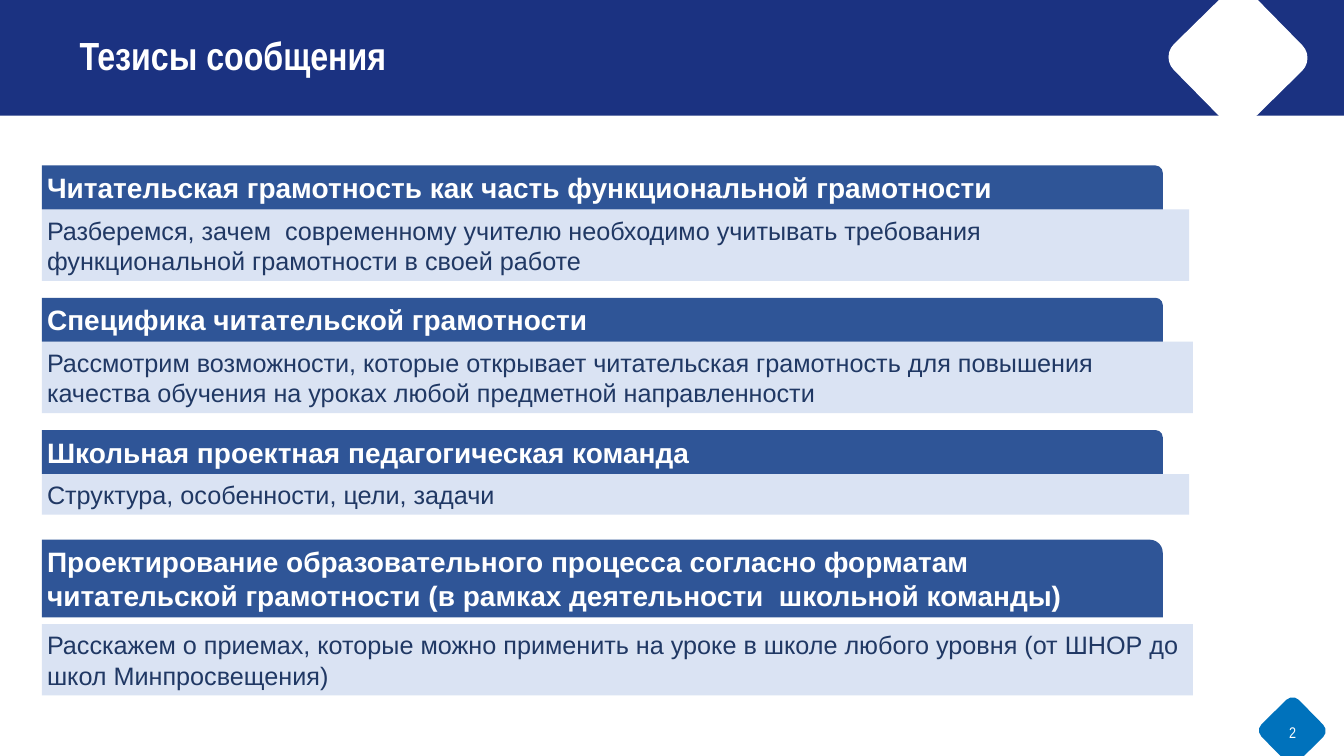
"""Builds the slide that lists the four theses of a talk on reading literacy."""
from pptx import Presentation
from pptx.dml.color import RGBColor
from pptx.enum.shapes import MSO_SHAPE
from pptx.enum.text import MSO_ANCHOR, PP_ALIGN
from pptx.util import Pt

COLORS = {
    "band": "1B3281",
    "badge": "0072BC",
    "header": "2F5597",
    "panel": "DAE3F3",
    "body": "203864",
    "white": "FFFFFF",
}

deck = Presentation()
deck.slide_width, deck.slide_height = Pt(960), Pt(540)
page = deck.slides.add_slide(deck.slide_layouts[6])


def add_block(preset, left, top, width, height, color, rotation=0):
    """Add a filled shape without line or shadow."""
    block = page.shapes.add_shape(preset, Pt(left), Pt(top), Pt(width), Pt(height))
    block.shadow.inherit = False
    block.fill.solid()
    block.fill.fore_color.rgb = RGBColor.from_string(COLORS[color])
    block.line.fill.background()
    block.rotation = rotation
    return block


def write(box, text, size, color, font, bold=False, align=PP_ALIGN.LEFT, wrap=True):
    """Put one vertically centred paragraph into a box and return it."""
    frame = box.text_frame
    frame.word_wrap = wrap
    frame.vertical_anchor = MSO_ANCHOR.MIDDLE
    frame.margin_left = frame.margin_right = Pt(3.6)
    frame.margin_top = frame.margin_bottom = Pt(3.6)
    para = frame.paragraphs[0]
    para.text = text
    para.alignment = align
    para.font.name = font
    para.font.size = Pt(size)
    para.font.bold = bold
    para.font.color.rgb = RGBColor.from_string(COLORS[color])
    return para


add_block(MSO_SHAPE.ROUNDED_RECTANGLE, 904.4, 503.2, 37.4, 37.4, "badge", 45.5)
add_block(MSO_SHAPE.RECTANGLE, 0, 0, 960, 82.6, "band")
add_block(MSO_SHAPE.ROUNDED_RECTANGLE, 845.4, 2.2, 77.8, 77.8, "white", 45.5)

title = page.shapes.add_textbox(Pt(53.3), Pt(0), Pt(783.4), Pt(82.6))
write(title, "Тезисы сообщения", 28, "white", "Arial Narrow", bold=True).line_spacing = 0.9

number = page.shapes.add_textbox(Pt(917.3), Pt(512.8), Pt(12.2), Pt(20.8))
write(number, "2", 11, "white", "Arial Narrow", align=PP_ALIGN.CENTER, wrap=False)

theses = [
    (118.2, 31.4, "Читательская грамотность как часть функциональной грамотности",
     149.6, 51, 819.4,
     "Разберемся, зачем  современному учителю необходимо учитывать требования "
     "функциональной грамотности в своей работе"),
    (212.7, 31.4, "Специфика читательской грамотности",
     244.1, 51, 822.2,
     "Рассмотрим возможности, которые открывает читательская грамотность для "
     "повышения качества обучения на уроках любой предметной направленности"),
    (307.2, 31.4, "Школьная проектная педагогическая команда",
     338.6, 29, 819.4,
     "Структура, особенности, цели, задачи"),
    (385.5, 55.5, "Проектирование образовательного процесса согласно форматам "
     "читательской грамотности (в рамках деятельности  школьной команды)",
     445.8, 51, 822.2,
     "Расскажем о приемах, которые можно применить на уроке в школе любого "
     "уровня (от ШНОР до школ Минпросвещения)"),
]
for header_top, header_height, heading, panel_top, panel_height, panel_width, summary in theses:
    panel = add_block(MSO_SHAPE.RECTANGLE, 30, panel_top, panel_width, panel_height, "panel")
    write(panel, summary, 18, "body", "Arial")
    header = add_block(MSO_SHAPE.ROUND_1_RECTANGLE, 30, header_top, 800.6, header_height, "header")
    write(header, heading, 20, "white", "Arial", bold=True)

deck.save("out.pptx")
